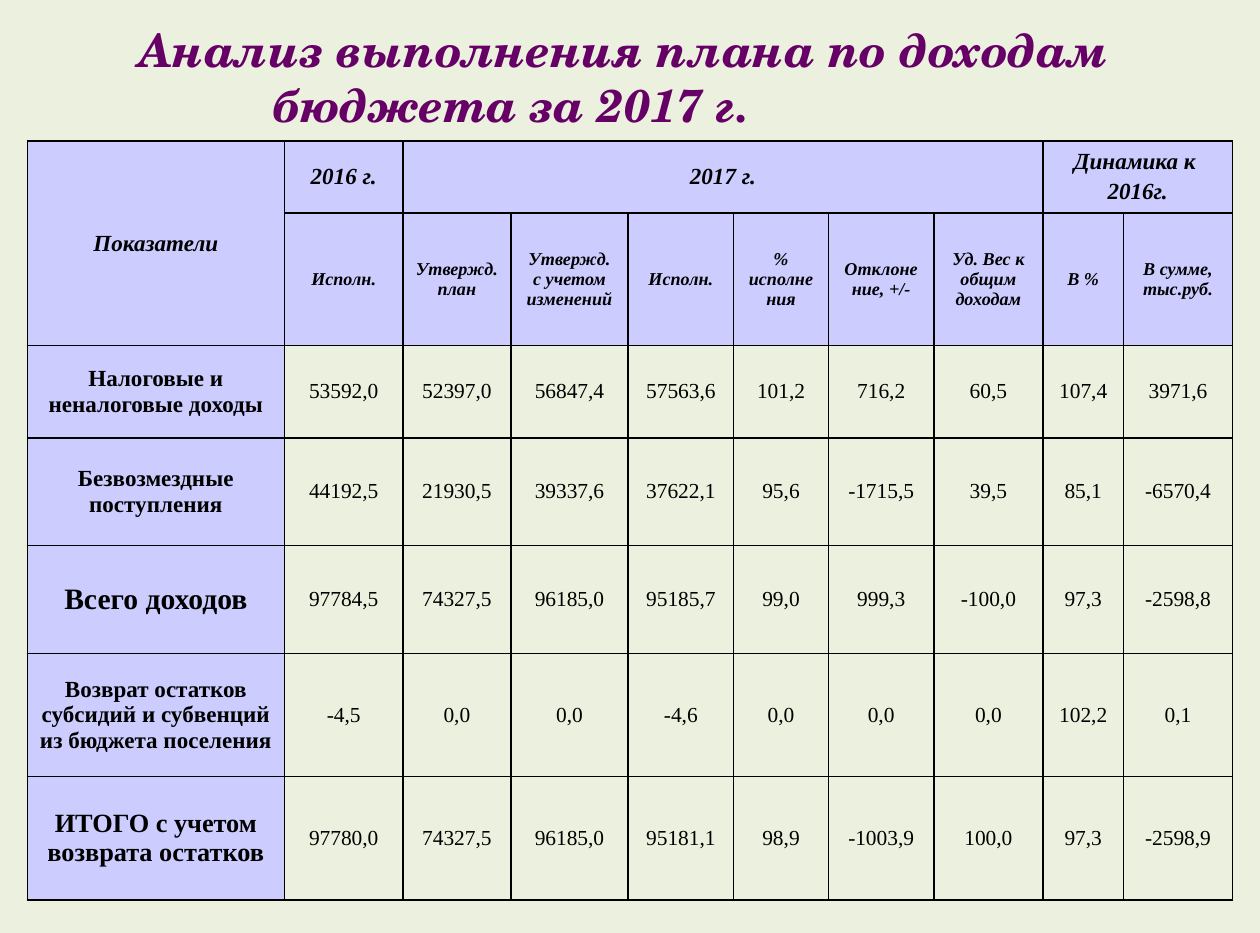
from lxml import etree
from pptx import Presentation
from pptx.dml.color import RGBColor
from pptx.enum.text import MSO_ANCHOR, PP_ALIGN
from pptx.oxml.ns import qn
from pptx.util import Inches, Pt

MIDDLE = MSO_ANCHOR.MIDDLE
CENTER = PP_ALIGN.CENTER
LEFT = PP_ALIGN.LEFT
SERIF = "Times New Roman"
SCHOOL = "TeX Gyre Schola"
PALE, LILAC, PLUM, BLACK = "EBF1DE", "CCCCFF", "660066", "000000"

TITLE = ["Анализ выполнения плана по доходам ", "бюджета за 2017 г."]
COLS = [2.17, 1, 0.91, 0.99, 0.89, 0.8, 0.89, 0.92, 0.68, 0.92]
ROWS = [0.5, 1.12, 0.78, 0.91, 0.91, 1.04, 1.04]
GROUPS = [(0, 0, 1, 0, "Показатели"), (0, 1, 0, 1, "2016 г."),
          (0, 2, 0, 7, "2017 г."), (0, 8, 0, 9, "Динамика к \n2016г.")]
HEADS = ["Исполн.", "Утвержд. план", "Утвержд. с учетом изменений",
         "Исполн.", "% исполнения", "Отклонение, +/-",
         "Уд. Вес к общим доходам", "В %", "В сумме, тыс.руб."]
DATA = [
    ("Налоговые и неналоговые доходы", 14, True,
     "53592,0 52397,0 56847,4 57563,6 101,2 716,2 60,5 107,4 3971,6"),
    ("Безвозмездные поступления", 14, True,
     "44192,5 21930,5 39337,6 37622,1 95,6 -1715,5 39,5 85,1 -6570,4"),
    ("Всего доходов", 18, True,
     "97784,5 74327,5 96185,0 95185,7 99,0 999,3 -100,0 97,3 -2598,8"),
    ("Возврат остатков субсидий и субвенций из бюджета поселения", 14, False,
     "-4,5 0,0 0,0 -4,6 0,0 0,0 0,0 102,2 0,1"),
    ("ИТОГО с учетом возврата остатков", 16, False,
     "97780,0 74327,5 96185,0 95181,1 98,9 -1003,9 100,0 97,3 -2598,9"),
]


def color(code):
    return RGBColor.from_string(code)


def add_run(para, text, size, font=SERIF, ink=BLACK, bold=False, italic=False):
    run = para.add_run()
    run.text = text
    run.font.name = font
    run.font.size = Pt(size)
    run.font.bold = bold
    run.font.italic = italic
    run.font.color.rgb = color(ink)


def add_title(slide, left, top, width, height):
    box = slide.shapes.add_textbox(
        Inches(left), Inches(top), Inches(width), Inches(height))
    frame = box.text_frame
    frame.word_wrap = True
    frame.vertical_anchor = MIDDLE
    frame.margin_left = frame.margin_right = Inches(0.11)
    para = frame.paragraphs[0]
    para.alignment = LEFT
    props = para._p.get_or_add_pPr()
    props.set("marL", str(Inches(2.2)))
    props.set("indent", str(Inches(-1.14)))
    for i, text in enumerate(TITLE):
        if i:
            para.add_line_break()
        add_run(para, text, 28, SCHOOL, PLUM, True, True)


def style_cell(cell, fill):
    cell.fill.solid()
    cell.fill.fore_color.rgb = color(fill)
    props = cell._tc.get_or_add_tcPr()
    for i, side in enumerate(("lnL", "lnR", "lnT", "lnB")):
        line = etree.Element(qn("a:" + side), w=str(Pt(1)))
        solid = etree.SubElement(line, qn("a:solidFill"))
        etree.SubElement(solid, qn("a:srgbClr"), val=BLACK)
        props.insert(i, line)


def fill_cell(cell, text, size, bold=False, italic=False, roomy=True):
    cell.vertical_anchor = MIDDLE
    cell.margin_left = cell.margin_right = Inches(0.1 if roomy else 0.07)
    cell.margin_top = cell.margin_bottom = Inches(0.05 if roomy else 0)
    frame = cell.text_frame
    for i, part in enumerate(text.split("\n")):
        para = frame.add_paragraph() if i else frame.paragraphs[0]
        para.alignment = CENTER
        if roomy:
            space = etree.SubElement(para._p.get_or_add_pPr(), qn("a:spcBef"))
            etree.SubElement(space, qn("a:spcPct"), val="20000")
        add_run(para, part, size, bold=bold, italic=italic)


def add_budget(slide, left, top):
    table = slide.shapes.add_table(
        len(ROWS), len(COLS), Inches(left), Inches(top),
        Inches(sum(COLS)), Inches(sum(ROWS))).table
    table.first_row = table.horz_banding = False
    for col, width in zip(table.columns, COLS):
        col.width = Inches(width)
    for row, height in zip(table.rows, ROWS):
        row.height = Inches(height)
    for r in range(len(ROWS)):
        for c in range(len(COLS)):
            style_cell(table.cell(r, c), LILAC if r < 2 or c == 0 else PALE)
    for r, c, end, last, text in GROUPS:
        cell = table.cell(r, c)
        if (r, c) != (end, last):
            cell.merge(table.cell(end, last))
        fill_cell(cell, text, 14, True, True)
    for c, text in enumerate(HEADS, 1):
        fill_cell(table.cell(1, c), text, 11, True, True)
    for r, (label, size, roomy, values) in enumerate(DATA, 2):
        fill_cell(table.cell(r, 0), label, size, True, roomy=roomy)
        for c, value in enumerate(values.split(), 1):
            fill_cell(table.cell(r, c), value, 13, roomy=False)


def main():
    deck = Presentation()
    deck.slide_width, deck.slide_height = Inches(10.63), Inches(7.875)
    slide = deck.slides.add_slide(deck.slide_layouts[6])
    back = slide.background.fill
    back.solid()
    back.fore_color.rgb = color(PALE)
    add_title(slide, 0, 0.27, 10.63, 0.75)
    add_budget(slide, 0.23, 1.19)
    deck.save("out.pptx")


if __name__ == "__main__":
    main()
